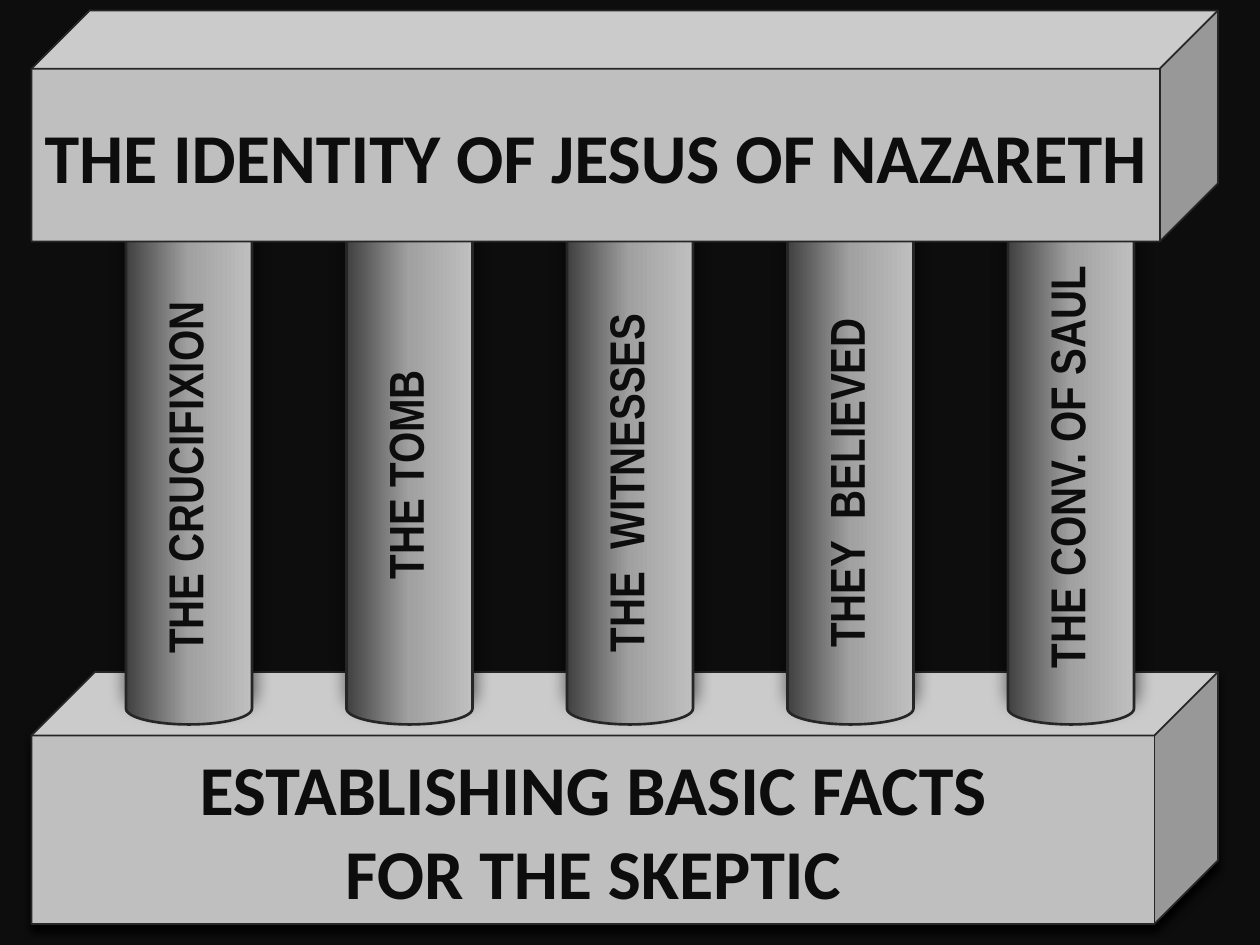
import copy

import pptx
import pptx.dml.color
import pptx.enum.shapes
import pptx.enum.text
import pptx.oxml
import pptx.oxml.ns
import pptx.util

SHAPE = pptx.enum.shapes.MSO_SHAPE
MIDDLE = pptx.enum.text.MSO_ANCHOR.MIDDLE
CENTER = pptx.enum.text.PP_ALIGN.CENTER
UNIT = pptx.util.Inches(1 / 12)  # the slide is 120 columns by 90 rows
COLUMNS, ROWS = 120, 90
INK, STONE, EDGE = "0D0D0D", "BFBFBF", "262626"


def paint(color, value):
    color.rgb = pptx.dml.color.RGBColor.from_string(value)


def write(shape, text, font, size):
    """Put bold, centred text in the middle of a shape."""
    frame = shape.text_frame
    frame.vertical_anchor = MIDDLE
    paragraph = frame.paragraphs[0]
    paragraph.text = text
    paragraph.alignment = CENTER
    for span in paragraph.runs:
        span.font.name = font
        span.font.size = pptx.util.Pt(size)
        span.font.bold = True
        paint(span.font.color, INK)


deck = pptx.Presentation()
deck.slide_width = COLUMNS * UNIT
deck.slide_height = ROWS * UNIT
page = deck.slides.add_slide(deck.slide_layouts[6])
shapes = page.shapes

backdrop = shapes.add_shape(SHAPE.RECTANGLE, 0, 0, deck.slide_width, deck.slide_height)
backdrop.shadow.inherit = False
backdrop.fill.solid()
paint(backdrop.fill.fore_color, INK)
backdrop.line.fill.background()

# Base, columns and beam, from back to front: kind, left, top, width, height, shadow
# A shadow is opacity in percent, blur and distance in points, direction in degrees
parts = [(SHAPE.CUBE, 3, 64, 113, 24, (100, 4, 4, 90))]
parts += [(SHAPE.CAN, 12 + 21 * number, 16, 12, 53, (62, 10, 8, 272))
          for number in reversed(range(5))]
parts += [(SHAPE.CUBE, 3, 1, 113, 22, None)]

slabs = []
for kind, left, top, width, height, shadow in parts:
    part = shapes.add_shape(kind, left * UNIT, top * UNIT, width * UNIT, height * UNIT)
    part.shadow.inherit = False
    paint(part.line.color, EDGE)
    if kind == SHAPE.CUBE:
        part.adjustments[0] = 0.252
        part.fill.solid()
        paint(part.fill.fore_color, STONE)
        part.line.width = pptx.util.Pt(1)
        slabs.append(part)
    else:
        part.fill.gradient()
        part.fill.gradient_angle = 0
        first = part.fill.gradient_stops[0]
        paint(first.color, "404040")
        paint(part.fill.gradient_stops[1].color, STONE)
        stop_list = part.element.spPr.find(".//" + pptx.oxml.ns.qn("a:gsLst"))
        stop_list.insert(1, copy.deepcopy(stop_list[0]))
        middle = part.fill.gradient_stops[1]
        middle.position = 0.5
        paint(middle.color, "A1A1A1")
        part.line.width = pptx.util.Pt(1.5)
    if shadow:
        opacity, blur, distance, direction = shadow
        effects = part.element.spPr.find(pptx.oxml.ns.qn("a:effectLst"))
        effects.append(pptx.oxml.parse_xml(
            f'<a:outerShdw {pptx.oxml.ns.nsdecls("a")} blurRad="{pptx.util.Pt(blur)}" '
            f'dist="{pptx.util.Pt(distance)}" dir="{direction * 60000}" '
            f'algn="ctr" rotWithShape="0"><a:srgbClr val="000000">'
            f'<a:alpha val="{opacity * 1000}"/></a:srgbClr></a:outerShdw>'))

base, beam = slabs
write(base, "ESTABLISHING BASIC FACTS\nFOR THE SKEPTIC", "Calibri", 40)
write(beam, "THE IDENTITY OF JESUS OF NAZARETH", "Calibri", 40)
beam.text_frame.word_wrap = False

# Each label runs up its column; the pair is its text and the row of its centre
labels = [("THE CRUCIFIXION", 45.5), ("THE TOMB", 45.2), ("THE  WITNESSES", 46),
          ("THEY  BELIEVED", 46), ("THE CONV. OF SAUL", 44.5)]
label_width, label_height = 46, 9
for number, (text, row) in enumerate(labels):
    column = 17.5 + 21 * number
    label = shapes.add_textbox(
        int((column - label_width / 2) * UNIT), int((row - label_height / 2) * UNIT),
        label_width * UNIT, label_height * UNIT)
    label.rotation = 270
    label.text_frame.word_wrap = True
    write(label, text, "Arial Narrow", 28)

deck.save("out.pptx")
